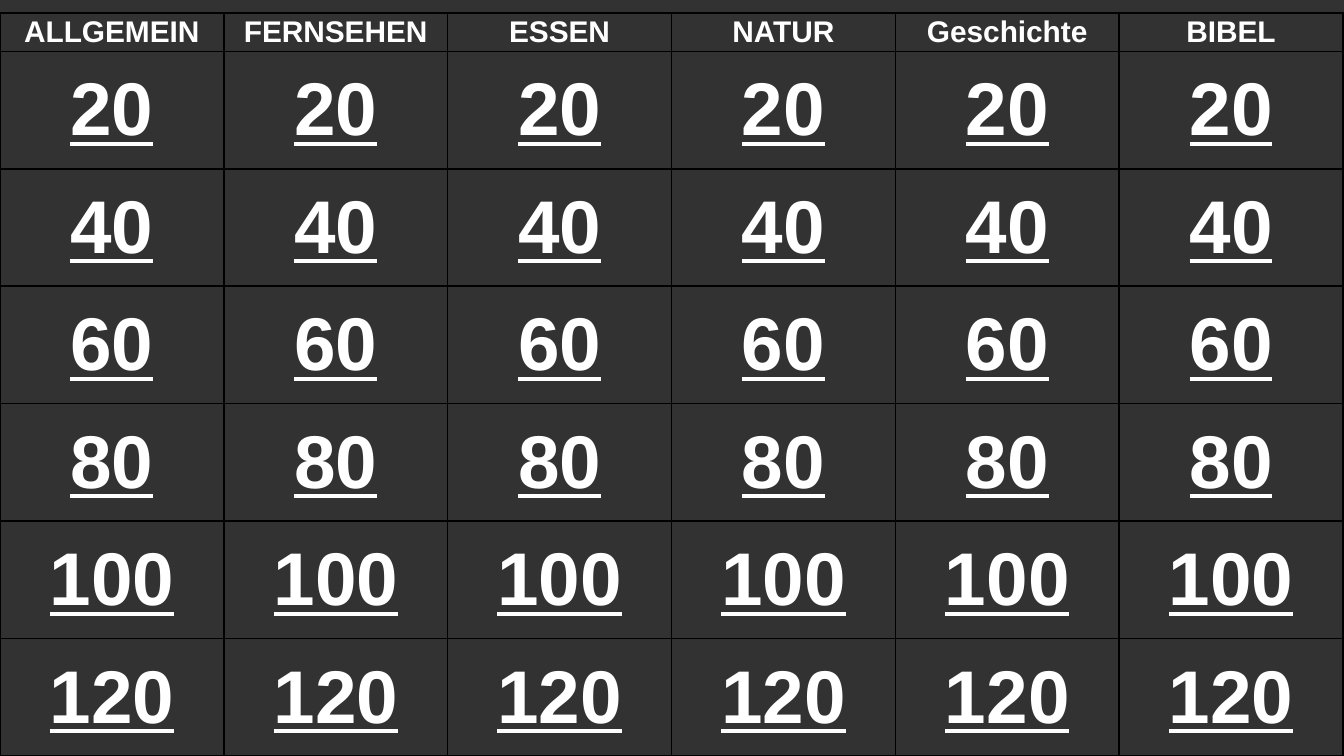
from lxml.etree import SubElement
from pptx import Presentation
from pptx.dml.color import RGBColor
from pptx.enum.text import MSO_ANCHOR, PP_ALIGN
from pptx.oxml.ns import qn
from pptx.util import Cm, Pt

CATEGORIES = ["ALLGEMEIN", "FERNSEHEN", "ESSEN", "NATUR", "Geschichte", "BIBEL"]
POINTS = range(20, 121, 20)


def rgb(value):
    """Return the colour for a hex string."""
    return RGBColor.from_string(value)


def add_borders(cell, color, width):
    """Draw a solid line on all four sides of a cell."""
    tcPr = cell._tc.get_or_add_tcPr()
    for side in ("lnL", "lnR", "lnT", "lnB"):
        ln = SubElement(tcPr, qn(f"a:{side}"), w=str(Pt(width)))
        fill = SubElement(ln, qn("a:solidFill"))
        SubElement(fill, qn("a:srgbClr"), val=color)


def fill_cell(cell, text, size, underline=False):
    """Write centred bold white text into a bordered cell."""
    add_borders(cell, "000000", 1)
    cell.fill.background()
    cell.vertical_anchor = MSO_ANCHOR.MIDDLE
    cell.margin_left = cell.margin_right = Cm(0.13)
    cell.margin_top = cell.margin_bottom = 0
    p = cell.text_frame.paragraphs[0]
    p.text = text
    p.alignment = PP_ALIGN.CENTER
    p.font.name = "Arial"
    p.font.size = Pt(size)
    p.font.bold = True
    p.font.underline = underline
    p.font.color.rgb = rgb("FFFFFF")


def add_board(s):
    """Add the quiz board with a category row and a row for each point value."""
    rows, cols = len(POINTS) + 1, len(CATEGORIES)
    frame = s.shapes.add_table(rows, cols, 0, Cm(0.25), Cm(25.38), Cm(14.04))
    table = frame.table
    table.first_row = table.horz_banding = False
    for row in table.rows:
        row.height = Cm(2.22)
    table.rows[0].height = Cm(0.72)
    for col, category in enumerate(CATEGORIES):
        fill_cell(table.cell(0, col), category, 16)
        for row, points in enumerate(POINTS, start=1):
            fill_cell(table.cell(row, col), str(points), 40, underline=True)


def main():
    """Build the quiz board slide."""
    prs = Presentation()
    prs.slide_width, prs.slide_height = Cm(25.4), Cm(14.29)
    s = prs.slides.add_slide(prs.slide_layouts[6])
    s.background.fill.solid()
    s.background.fill.fore_color.rgb = rgb("323232")
    add_board(s)
    prs.save("out.pptx")


if __name__ == "__main__":
    main()
